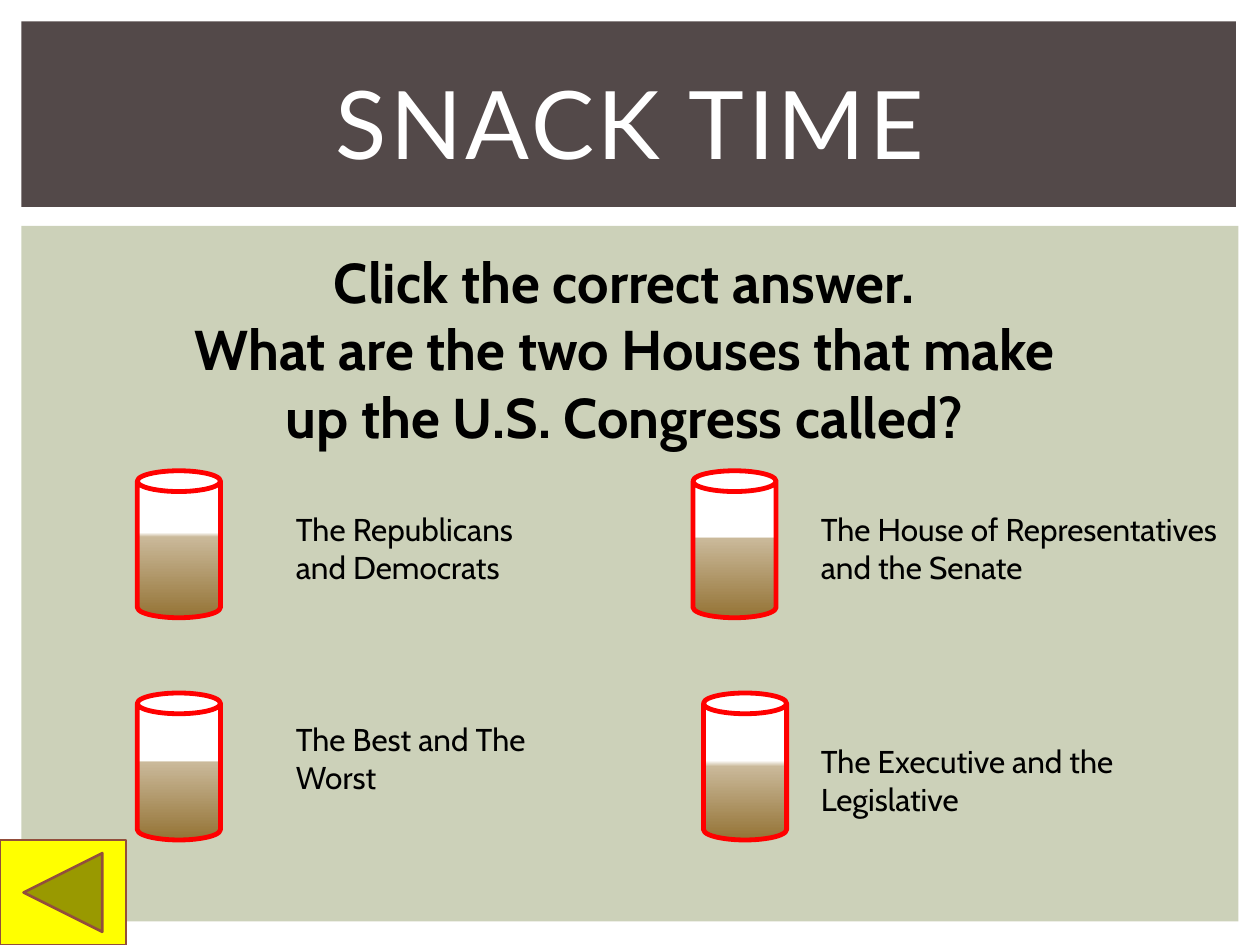
from lxml.etree import SubElement
from pptx import Presentation
from pptx.dml.color import RGBColor
from pptx.enum.shapes import MSO_SHAPE as SHAPE
from pptx.enum.text import MSO_ANCHOR as ANCHOR, MSO_AUTO_SIZE as AUTO, PP_ALIGN as ALIGN
from pptx.oxml.ns import qn
from pptx.util import Pt

WHITE = RGBColor(0xFF, 0xFF, 0xFF)
BLACK = RGBColor(0, 0, 0)
SAGE = RGBColor(0xCC, 0xD1, 0xB9)
BROWN = RGBColor(0x53, 0x49, 0x49)
RED = RGBColor(0xFF, 0, 0)
YELLOW = RGBColor(0xFF, 0xFF, 0)
RUST = RGBColor(0x92, 0x4E, 0x3C)
MILK = RGBColor(0xCA, 0xB9, 0x9A)
COCOA = RGBColor(0x94, 0x73, 0x35)


class Slide:
    """Styled drawing on one slide; boxes are (left, top, width, height) in points."""

    def __init__(self, slide, title_font="Lato", body_font="Cabin"):
        self.slide = slide
        self.title_font = title_font
        self.body_font = body_font

    def shape(self, kind, box, fill=None, line=None, weight=0):
        sp = self.slide.shapes.add_shape(kind, *map(Pt, box))
        sp.shadow.inherit = False
        if fill is not None:
            sp.fill.solid()
            sp.fill.fore_color.rgb = fill
        if line is None:
            sp.line.fill.background()
        else:
            sp.line.color.rgb = line
            sp.line.width = Pt(weight)
        return sp

    def glass(self, left, top, empty_to, drink_from):
        """Draw a glass whose drink starts between two percentages of its height."""
        sp = self.shape(SHAPE.CAN, (left, top, 47.5, 84), line=RED, weight=2.75)
        sp.fill.gradient()
        grad = sp.fill._xPr.find(qn("a:gradFill"))
        for child in list(grad):
            grad.remove(child)
        stops = SubElement(grad, qn("a:gsLst"))
        for pos, color in ((empty_to, WHITE), (drink_from, MILK), (100, COCOA)):
            gs = SubElement(stops, qn("a:gs"), pos=str(pos * 1000))
            SubElement(gs, qn("a:srgbClr"), val=str(color))
        SubElement(grad, qn("a:lin"), ang="5400000", scaled="0")

    def font(self, p, name, size, color, bold=False):
        p.font.name = name
        p.font.size = Pt(size)
        p.font.color.rgb = color
        p.font.bold = bold

    def title(self, text, box):
        sp = self.slide.shapes.title
        sp.left, sp.top, sp.width, sp.height = map(Pt, box)
        tf = sp.text_frame
        tf.text = text
        tf.vertical_anchor = ANCHOR.MIDDLE
        p = tf.paragraphs[0]
        p.alignment = ALIGN.CENTER
        self.font(p, self.title_font, 54, WHITE)
        p.runs[0].font._element.set("spc", "200")
        self.slide.shapes._spTree.append(sp._element)  # in front of the header band

    def text(self, lines, box, size=18, bold=False, align=ALIGN.LEFT):
        tf = self.slide.shapes.add_textbox(*map(Pt, box)).text_frame
        tf.word_wrap = True
        tf.auto_size = AUTO.SHAPE_TO_FIT_TEXT
        tf.text = "\n".join(lines)
        for p in tf.paragraphs:
            p.alignment = align
            self.font(p, self.body_font, size, BLACK, bold)


def main():
    prs = Presentation()
    prs.slide_width, prs.slide_height = Pt(720), Pt(540)
    s = Slide(prs.slides.add_slide(prs.slide_layouts[5]))

    s.shape(SHAPE.RECTANGLE, (12.25, 129, 695.5, 397.5), SAGE)
    s.shape(SHAPE.RECTANGLE, (12.25, 12.25, 694, 106), BROWN)
    s.title("SNACK TIME", (30, 28, 660, 83))
    s.text(["Click the correct answer.",
            "What are the two Houses that make up the U.S. Congress called?"],
           (90, 138, 534, 124), size=32, bold=True, align=ALIGN.CENTER)

    # glass left, top, gradient stops; answer left, top, width
    answers = [
        ("The Republicans and Democrats", (78.5, 269, 42, 45), (162, 288, 156)),
        ("The House of Representatives and the Senate", (396, 269, 45, 46), (462, 288, 246)),
        ("The Best and The Worst", (78.5, 396, 46, 47), (162, 408, 186)),
        ("The Executive and the Legislative", (402, 396, 46, 50), (462, 420.5, 228)),
    ]
    for answer, glass, label in answers:
        s.glass(*glass)
        s.text([answer], (*label, 51))

    s.shape(SHAPE.ACTION_BUTTON_BACK_OR_PREVIOUS, (0, 480, 72, 60), YELLOW, RUST, 1.5)
    prs.save("out.pptx")


if __name__ == "__main__":
    main()
